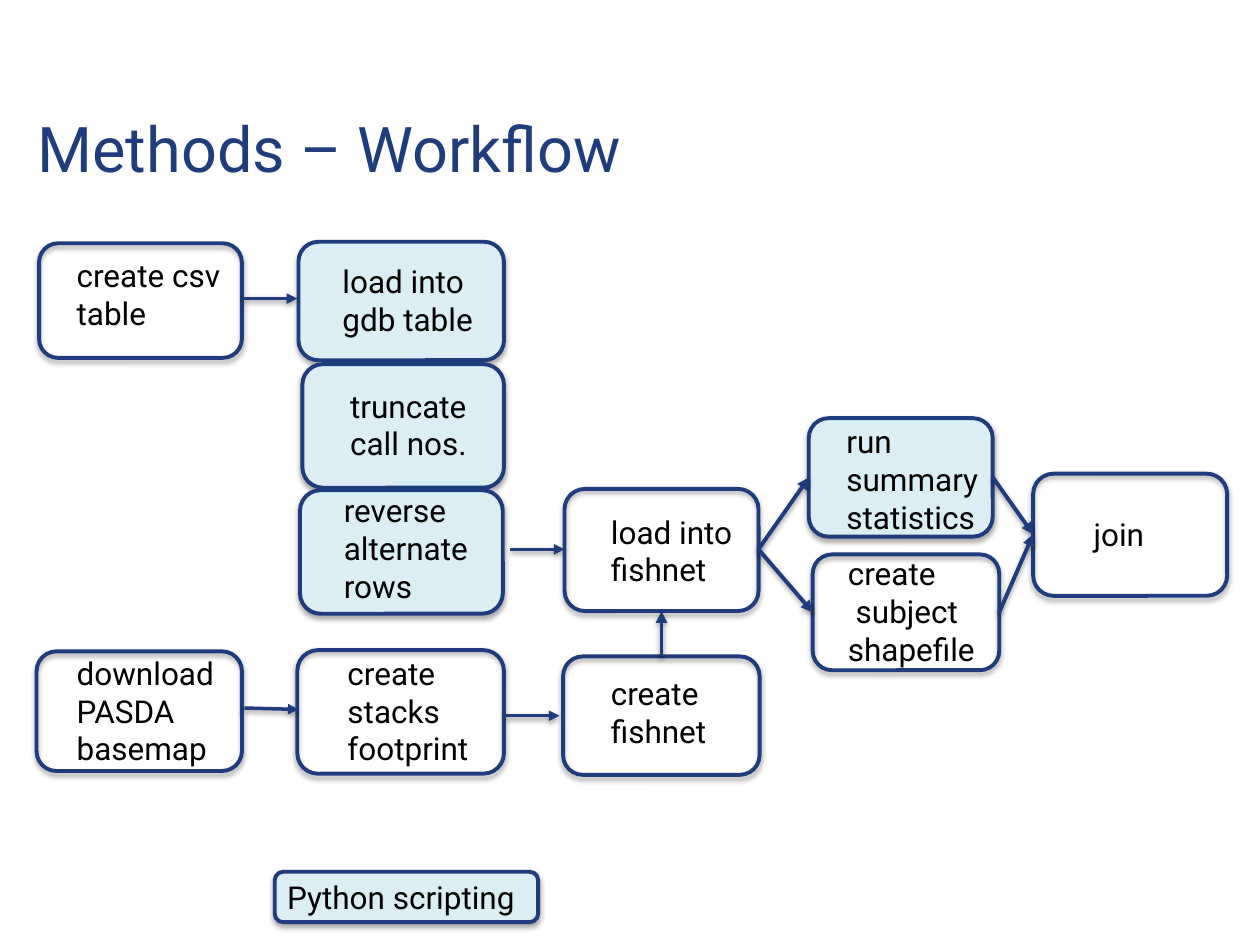
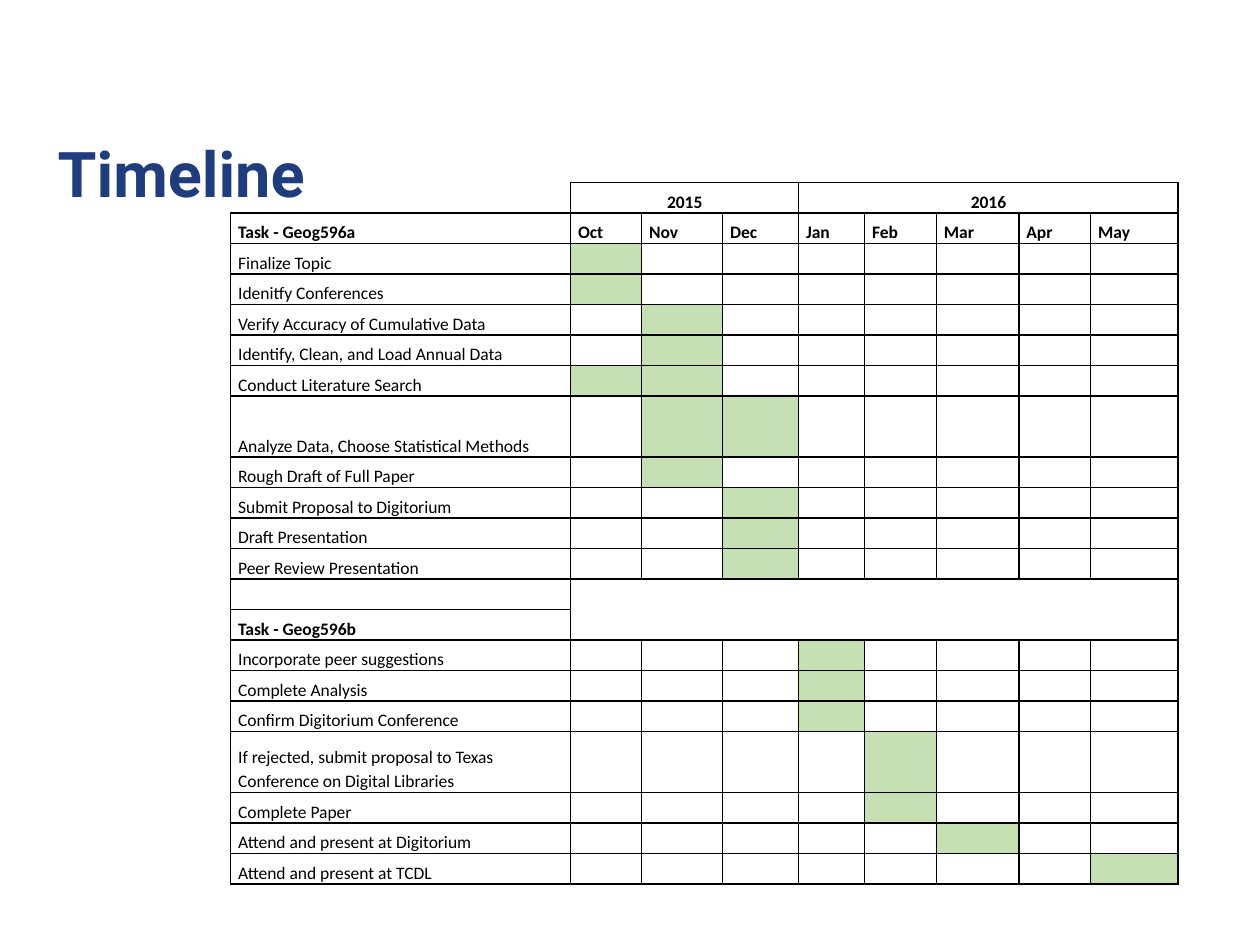
from dataclasses import dataclass
from typing import NamedTuple

from lxml.etree import SubElement
from pptx import Presentation
from pptx.dml.color import RGBColor
from pptx.enum.shapes import MSO_CONNECTOR as Connector, MSO_SHAPE as Preset
from pptx.enum.text import MSO_ANCHOR as Anchor, PP_ALIGN as Align
from pptx.oxml.ns import qn
from pptx.util import Pt


@dataclass(frozen=True)
class Theme:
    navy: str = "1F3D7D"
    ink: str = "000000"
    scripted: str = "DBEEF4"
    busy: str = "C6E0B4"
    heading_font: str = "Roboto"
    table_font: str = "Calibri"
    title_size: int = 36
    label_size: int = 18
    table_size: int = 10
    outline: float = 2.25
    grid_line: float = 1
    plain_table: str = "{2D5ABB26-0587-4C30-8999-92F81FD0307C}"


THEME = Theme()


class Area(NamedTuple):
    left: float
    top: float
    width: float
    height: float

    def lengths(self) -> list[Pt]:
        return [Pt(value) for value in self]


class Step(NamedTuple):
    lines: tuple[str, ...]
    frame: Area
    label: Area
    scripted: bool = False


class Arrow(NamedTuple):
    start: tuple[float, float]
    end: tuple[float, float]
    weight: float = THEME.outline


class Task(NamedTuple):
    name: str
    months: tuple[str, ...] = ()
    units: int = 1


STEPS = [
    Step(("create csv table",), Area(22.3, 139, 115.9, 65.5), Area(36.7, 142.6, 101.5, 72.7)),
    Step(("load into gdb table",), Area(170.6, 138.2, 117.4, 67.7), Area(188.6, 146.2, 111.6, 51.1), True),
    Step(("truncate call nos.",), Area(172.8, 208.1, 115.2, 70.6), Area(193, 217.4, 97.9, 51.1), True),
    Step(("reverse alternate rows",), Area(171.4, 280.1, 115.9, 70.6), Area(189.4, 277.2, 102.2, 72.7), True),
    Step(("download PASDA basemap",), Area(20.9, 372.2, 117.4, 68.4), Area(36.7, 370.1, 92.9, 94.3)),
    Step(("create stacks footprint",), Area(169.9, 371.5, 118.1, 70.6), Area(191.5, 370.1, 100.8, 72.7)),
    Step(("create fishnet",), Area(321.8, 375.1, 112.3, 67.7), Area(342, 381.6, 95.8, 51.1)),
    Step(("load into fishnet",), Area(322.6, 279.4, 110.9, 69.8), Area(342, 289.4, 92.9, 51.1)),
    Step(("run", "summary statistics"), Area(462.2, 239, 105.1, 67.7), Area(476.6, 237.6, 117.4, 72.7), True),
    Step(("create", " subject shapefile"), Area(464.4, 316.8, 106.6, 66.2), Area(477.4, 313.2, 121.7, 72.7)),
    Step(("join",), Area(590.4, 270.7, 110.9, 69.8), Area(617.8, 290.9, 91.4, 28.8)),
    Step(("Python scripting",), Area(157, 498.2, 150.5, 28.8), Area(157, 498.2, 175, 28.8), True),
]

FORK = (433.4, 313.9)
JOIN = (590.4, 305.3)
ARROWS = [
    Arrow((139, 170.6), (169.9, 170.6), 2),
    Arrow((291.6, 313.9), (322.6, 313.9), 2),
    Arrow((139.7, 404.6), (170.6, 405.4), 2),
    Arrow((288.7, 409), (319.7, 409), 2),
    Arrow((378, 375.1), (378, 349.2)),
    Arrow(FORK, (462.2, 272.9)),
    Arrow(FORK, (464.4, 349.9)),
    Arrow((567.4, 272.9), JOIN),
    Arrow((571, 349.9), JOIN),
]

MONTHS = ("Oct", "Nov", "Dec", "Jan", "Feb", "Mar", "Apr", "May")
YEARS = {"2015": (1, 3), "2016": (4, 8)}
COLUMN_WIDTHS = (194.3, 40.6, 46.3, 43.4, 37.7, 41.1, 47.1, 41.1, 50)
ROW_UNIT = 17.44
FIRST_TERM = [
    Task("Finalize Topic", ("Oct",)),
    Task("Idenitfy Conferences", ("Oct",)),
    Task("Verify Accuracy of Cumulative Data", ("Nov",)),
    Task("Identify, Clean, and Load Annual Data", ("Nov",)),
    Task("Conduct Literature Search", ("Oct", "Nov")),
    Task("Analyze Data, Choose Statistical Methods", ("Nov", "Dec"), 2),
    Task("Rough Draft of Full Paper", ("Nov",)),
    Task("Submit Proposal to Digitorium", ("Dec",)),
    Task("Draft Presentation", ("Dec",)),
    Task("Peer Review Presentation", ("Dec",)),
]
SECOND_TERM = [
    Task("Incorporate peer suggestions", ("Jan",)),
    Task("Complete Analysis", ("Jan",)),
    Task("Confirm Digitorium Conference", ("Jan",)),
    Task("If rejected, submit proposal to Texas Conference on Digital Libraries", ("Feb",), 2),
    Task("Complete Paper", ("Feb",)),
    Task("Attend and present at Digitorium", ("Mar",)),
    Task("Attend and present at TCDL", ("May",)),
]
HEADER = Task("Task - Geog596a")
DIVIDER = Task("Task - Geog596b")
ROWS = [Task(""), HEADER, *FIRST_TERM, Task(""), DIVIDER, *SECOND_TERM]


def color(code: str) -> RGBColor:
    return RGBColor.from_string(code)


def add_span(para, text: str, font: str, size: float, ink: str, bold: bool = False) -> None:
    span = para.add_run()
    span.text = text
    span.font.name = font
    span.font.size = Pt(size)
    span.font.bold = bold
    span.font.color.rgb = color(ink)


def add_text(page, area: Area, lines: tuple[str, ...], size: float, ink: str, bold: bool = False) -> None:
    frame = page.shapes.add_textbox(*area.lengths()).text_frame
    frame.word_wrap = True
    for index, line in enumerate(lines):
        para = frame.add_paragraph() if index else frame.paragraphs[0]
        add_span(para, line, THEME.heading_font, size, ink, bold)


def add_title(page, text: str, area: Area, bold: bool = False) -> None:
    add_text(page, area, (text,), THEME.title_size, THEME.navy, bold)


def add_shadow(properties, distance: float, opacity: int) -> None:
    effects = properties.find(qn("a:effectLst"))
    if effects is None:
        effects = SubElement(properties, qn("a:effectLst"))
    shadow = SubElement(effects, qn("a:outerShdw"), blurRad=str(Pt(3.1)), dist=str(Pt(distance)),
                        dir="5400000", rotWithShape="0")
    tint = SubElement(shadow, qn("a:srgbClr"), val=THEME.ink)
    SubElement(tint, qn("a:alpha"), val=str(opacity * 1000))


def add_step(page, step: Step) -> None:
    card = page.shapes.add_shape(Preset.ROUNDED_RECTANGLE, *step.frame.lengths())
    if step.scripted:
        card.fill.solid()
        card.fill.fore_color.rgb = color(THEME.scripted)
    else:
        card.fill.background()
    card.line.color.rgb = color(THEME.navy)
    card.line.width = Pt(THEME.outline)
    card.shadow.inherit = False
    add_shadow(card._element.spPr, 1.8, 35)
    add_text(page, step.label, step.lines, THEME.label_size, THEME.ink)


def add_arrow(page, arrow: Arrow) -> None:
    ends = [Pt(value) for value in (*arrow.start, *arrow.end)]
    connector = page.shapes.add_connector(Connector.STRAIGHT, *ends)
    connector.line.color.rgb = color(THEME.navy)
    connector.line.width = Pt(arrow.weight)
    SubElement(connector.line._get_or_add_ln(), qn("a:tailEnd"), type="triangle")
    add_shadow(connector._element.spPr, 1.6, 38)


def style_cell(cell, sides: str, busy: bool) -> None:
    cell.vertical_anchor = Anchor.BOTTOM
    cell.margin_left = cell.margin_right = Pt(4.3)
    cell.margin_top = cell.margin_bottom = Pt(0)
    properties = cell._tc.get_or_add_tcPr()
    for side in "LRTB":
        border = SubElement(properties, qn(f"a:ln{side}"), w=str(Pt(THEME.grid_line)))
        if side in sides:
            paint = SubElement(border, qn("a:solidFill"))
            SubElement(paint, qn("a:srgbClr"), val=THEME.ink)
        else:
            SubElement(border, qn("a:noFill"))
    if busy:
        cell.fill.solid()
        cell.fill.fore_color.rgb = color(THEME.busy)
    else:
        cell.fill.background()


def fill_cell(cell, text: str, bold: bool, centred: bool = False) -> None:
    para = cell.text_frame.paragraphs[0]
    para.line_spacing = 1.15
    if centred:
        para.alignment = Align.CENTER
    if text:
        add_span(para, text, THEME.table_font, THEME.table_size, THEME.ink, bold)
    else:
        SubElement(para._p, qn("a:endParaRPr"), sz=str(THEME.table_size * 100))


def cell_text(row: int, column: int) -> str:
    if column == 0:
        return ROWS[row].name
    if ROWS[row] is HEADER:
        return MONTHS[column - 1]
    if row == 0:
        return next((year for year, (first, _) in YEARS.items() if first == column), "")
    return ""


def add_timeline(page) -> None:
    height = ROW_UNIT * sum(task.units for task in ROWS)
    area = Area(131.8, 104.2, sum(COLUMN_WIDTHS), height)
    table = page.shapes.add_table(len(ROWS), len(COLUMN_WIDTHS), *area.lengths()).table
    table.first_row = table.horz_banding = False
    table._tbl.tblPr.find(qn("a:tableStyleId")).text = THEME.plain_table
    for column, width in zip(table.columns, COLUMN_WIDTHS):
        column.width = Pt(width)
    for row, task in enumerate(ROWS):
        table.rows[row].height = Pt(ROW_UNIT * task.units)
        for column in range(len(COLUMN_WIDTHS)):
            cell = table.cell(row, column)
            busy = column > 0 and MONTHS[column - 1] in task.months
            style_cell(cell, "LRTB" if row or column else "RB", busy)
            bold = row == 0 or task in (HEADER, DIVIDER)
            fill_cell(cell, cell_text(row, column), bold, row == 0)
    for first, last in YEARS.values():
        table.cell(0, first).merge(table.cell(0, last))
    divider = ROWS.index(DIVIDER)
    table.cell(divider - 1, 1).merge(table.cell(divider, len(MONTHS)))


def build_workflow(page) -> None:
    add_title(page, "Methods – Workflow", Area(14.4, 59, 541.4, 94.3))
    for step in STEPS:
        add_step(page, step)
    for arrow in ARROWS:
        add_arrow(page, arrow)


def build_timeline(page) -> None:
    add_timeline(page)
    add_title(page, "Timeline", Area(25.9, 73.4, 211, 51.1), bold=True)


def main() -> None:
    deck = Presentation()
    deck.slide_width, deck.slide_height = Pt(720), Pt(540)
    for build in (build_workflow, build_timeline):
        build(deck.slides.add_slide(deck.slide_layouts[6]))
    deck.save("out.pptx")


if __name__ == "__main__":
    main()
